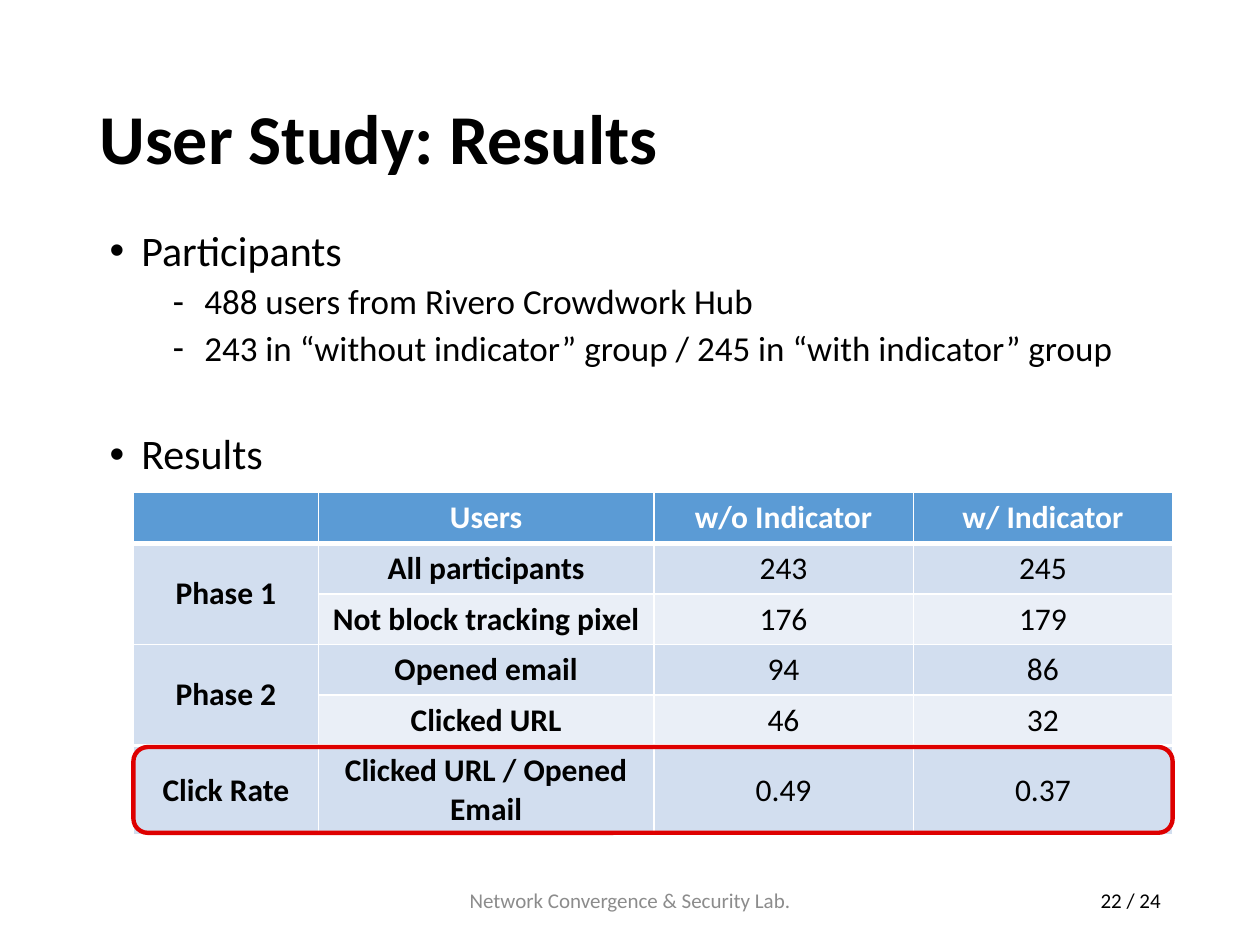
from typing import NamedTuple

from lxml.etree import SubElement
from pptx import Presentation
from pptx.dml.color import RGBColor
from pptx.enum.shapes import MSO_SHAPE as Shape
from pptx.enum.text import MSO_ANCHOR as Anchor, MSO_AUTO_SIZE as Fit, PP_ALIGN as Align
from pptx.oxml.ns import qn
from pptx.util import Cm, Pt

FONT = "Calibri"
BLACK = RGBColor(0x00, 0x00, 0x00)
WHITE = RGBColor(0xFF, 0xFF, 0xFF)
GRAY = RGBColor(0x8C, 0x8C, 0x8C)
RED = RGBColor(0xDE, 0x00, 0x00)
BLUE = RGBColor(0x5B, 0x9B, 0xD5)
BAND = RGBColor(0xD2, 0xDE, 0xEF)
PALE = RGBColor(0xEA, 0xEF, 0xF7)

LEFT, WIDTH = Cm(2.69), Cm(20.95)


class Bullet(NamedTuple):
    text: str
    mark: str
    size: int
    indent: float
    before: int


class Note(NamedTuple):
    text: str
    left: float
    width: float
    align: Align
    color: RGBColor


BULLETS = [
    Bullet("Participants", "•", 24, 0.64, 10),
    Bullet("488 users from Rivero Crowdwork Hub", "-", 20, 1.91, 5),
    Bullet("243 in “without indicator” group / 245 in “with indicator” group",
           "-", 20, 1.91, 5),
    Bullet("Results", "•", 24, 0.64, 37),
]
NOTES = [
    Note("Network Convergence & Security Lab.", 8.41, 8.59, Align.CENTER, GRAY),
    Note("22 / 24", 17.93, 5.72, Align.RIGHT, BLACK),
]
COLS = [3.73, 6.76, 5.23, 5.23]
ROWS = [
    ("", "Users", "w/o Indicator", "w/ Indicator"),
    ("Phase 1", "All participants", "243", "245"),
    ("", "Not block tracking pixel", "176", "179"),
    ("Phase 2", "Opened email", "94", "86"),
    ("", "Clicked URL", "46", "32"),
    ("Click Rate", "Clicked URL / Opened Email", "0.49", "0.37"),
]
PHASES = [1, 3]  # first row of each two-row phase
RULES = {1: 3, 5: 2.25}  # heavier rule above these rows, in points


def style(para, size: int, color: RGBColor, bold: bool = False, align=Align.LEFT) -> None:
    font = para.font
    font.name, font.size, font.bold = FONT, Pt(size), bold
    font.color.rgb = color
    para.alignment = align


def add_title(slide) -> None:
    title = slide.shapes.title
    title.left, title.top, title.width, title.height = Cm(1.75), Cm(1.02), Cm(21.9), Cm(3.68)
    frame = title.text_frame
    frame.text = "User Study: Results"
    frame.auto_size, frame.vertical_anchor = Fit.NONE, Anchor.MIDDLE
    para = frame.paragraphs[0]
    style(para, 40, BLACK, True)
    para.line_spacing = 0.9


def add_bullets(slide) -> None:
    frame = slide.shapes.add_textbox(Cm(1.96), Cm(4.52), Cm(21.9), Cm(12.45)).text_frame
    frame.word_wrap = True
    for i, item in enumerate(BULLETS):
        para = frame.add_paragraph() if i else frame.paragraphs[0]
        para.text = item.text
        style(para, item.size, BLACK)
        para.line_spacing, para.space_before = 0.9, Pt(item.before)
        props = para._p.get_or_add_pPr()
        props.set("marL", str(Cm(item.indent)))
        props.set("indent", str(-Cm(0.64)))
        SubElement(props, qn("a:buFont"), typeface="Arial")
        SubElement(props, qn("a:buChar"), char=item.mark)


def add_note(slide, note: Note) -> None:
    box = slide.shapes.add_textbox(Cm(note.left), Cm(17.65), Cm(note.width), Cm(1.01))
    frame = box.text_frame
    frame.word_wrap, frame.vertical_anchor = True, Anchor.MIDDLE
    frame.text = note.text
    style(frame.paragraphs[0], 12, note.color, align=note.align)


def add_edges(cell, row: int) -> None:
    """Draw white cell borders; call before the fill, which must follow them."""
    props = cell._tc.get_or_add_tcPr()
    widths = {"L": 1, "R": 1, "T": RULES.get(row, 1), "B": RULES.get(row + 1, 1)}
    for side, width in widths.items():
        line = SubElement(props, qn(f"a:ln{side}"), w=str(Pt(width)))
        fill = SubElement(line, qn("a:solidFill"))
        SubElement(fill, qn("a:srgbClr"), val=str(WHITE))


def add_results(slide) -> None:
    frame = slide.shapes.add_table(len(ROWS), len(COLS), LEFT, Cm(9.93), WIDTH, Cm(6.9))
    table = frame.table
    for col, width in zip(table.columns, COLS):
        col.width = Cm(width)
    for r, texts in enumerate(ROWS):
        table.rows[r].height = Cm(1.8 if r == len(ROWS) - 1 else 1.02)
        for c, text in enumerate(texts):
            cell = table.cell(r, c)
            add_edges(cell, r)
            cell.fill.solid()
            shade = BAND if r % 2 or c == 0 else PALE
            cell.fill.fore_color.rgb = shade if r else BLUE
            cell.vertical_anchor = Anchor.MIDDLE
            cell.text = text
            style(cell.text_frame.paragraphs[0], 18, BLACK if r else WHITE,
                  r == 0 or c < 2, Align.CENTER)
    for r in PHASES:
        table.cell(r, 0).merge(table.cell(r + 1, 0))


def add_frame(slide) -> None:
    """Outline the click rate row."""
    box = slide.shapes.add_shape(Shape.ROUNDED_RECTANGLE, LEFT, Cm(15.06), WIDTH, Cm(1.73))
    box.shadow.inherit = False
    box.fill.background()
    box.line.color.rgb = RED
    box.line.width = Pt(2.5)


def main() -> None:
    deck = Presentation()
    deck.slide_width, deck.slide_height = Cm(25.4), Cm(19.05)
    slide = deck.slides.add_slide(deck.slide_layouts[5])
    add_title(slide)
    add_bullets(slide)
    add_results(slide)
    for note in NOTES:
        add_note(slide, note)
    add_frame(slide)
    deck.save("out.pptx")


if __name__ == "__main__":
    main()
